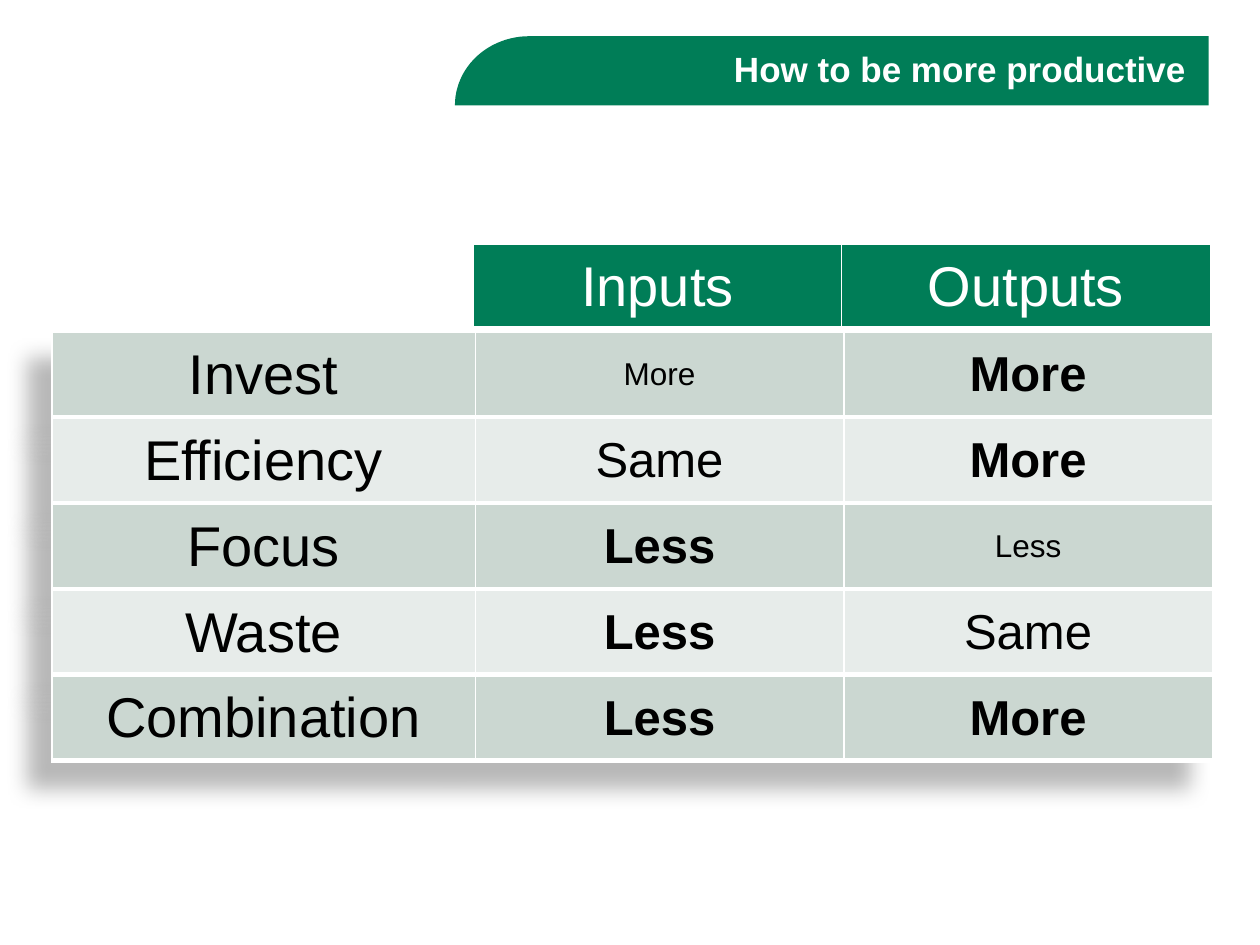
from math import cos, pi, sin

from lxml import etree
from pptx import Presentation
from pptx.dml.color import RGBColor
from pptx.enum.text import MSO_ANCHOR as Anchor, PP_ALIGN as Align
from pptx.oxml.ns import qn
from pptx.util import Pt

GREEN, SAGE, MIST, WHITE, BLACK = "007D57", "CBD7D1", "E7ECEA", "FFFFFF", "000000"
FONT = "Arial"
COLUMN_WIDTHS = (242, 210.6, 210.6)
ROW_HEIGHT, ROW_PITCH = 48.2, 49.1

HEADINGS = [("", 32, False), ("Inputs", 32, False), ("Outputs", 32, False)]
STRATEGIES = [
    [("Invest", 32, False), ("More", 18, False), ("More", 28, True)],
    [("Efficiency", 32, False), ("Same", 28, False), ("More", 28, True)],
    [("Focus", 32, False), ("Less", 28, True), ("Less", 18, False)],
    [("Waste", 32, False), ("Less", 28, True), ("Same", 28, False)],
    [("Combination", 32, False), ("Less", 28, True), ("More", 28, True)],
]


def color(value):
    return RGBColor.from_string(value)


def add_run(paragraph, text, size, bold, text_color):
    run = paragraph.add_run()
    run.text = text
    font = run.font
    font.name, font.size, font.bold = FONT, Pt(size), bold
    font.color.rgb = color(text_color)


def add_solid_color(parent, value):
    fill = etree.SubElement(parent, qn("a:solidFill"))
    return etree.SubElement(fill, qn("a:srgbClr"), val=value)


def set_borders(cell):
    properties = cell._tc.get_or_add_tcPr()
    for index, (side, width) in enumerate((("L", 1), ("R", 1), ("T", 1), ("B", 3))):
        line = etree.Element(qn(f"a:ln{side}"), w=str(Pt(width)))
        add_solid_color(line, WHITE)
        properties.insert(index, line)


def add_table_shadow(table):
    """Cast a soft shadow down and to the left."""
    effects = etree.Element(qn("a:effectLst"))
    shadow = etree.SubElement(
        effects, qn("a:outerShdw"), blurRad=str(Pt(12)), dist=str(Pt(20)),
        dir=str(135 * 60000), algn="tr", rotWithShape="0")
    shadow_color = add_solid_color(effects, BLACK)
    shadow.append(shadow_color)
    effects.remove(effects[-1])
    etree.SubElement(shadow_color, qn("a:alpha"), val="28000")
    table._tbl.tblPr.insert(0, effects)


def add_banner(slide, left, top, width, height):
    """Draw the title bar with its elliptical top left corner."""
    corner_width, steps = 42.5, 24
    angles = [pi / 2 * step / steps for step in range(steps + 1)]
    corner = [(left + corner_width * (1 - cos(angle)), top + height * (1 - sin(angle)))
              for angle in angles]
    right, bottom = left + width, top + height
    builder = slide.shapes.build_freeform(Pt(left), Pt(bottom))
    points = corner[1:] + [(right, top), (right, bottom)]
    builder.add_line_segments([(Pt(x), Pt(y)) for x, y in points], close=True)
    banner = builder.convert_to_shape()
    banner.shadow.inherit = False
    banner.fill.solid()
    banner.fill.fore_color.rgb = color(GREEN)
    banner.line.fill.background()

    title = slide.shapes.add_textbox(
        Pt(left + 43), Pt(top + 1.4), Pt(width - 56), Pt(33.8))
    frame = title.text_frame
    frame.word_wrap = True
    frame.margin_left = frame.margin_right = 0
    frame.vertical_anchor = Anchor.MIDDLE
    paragraph = frame.paragraphs[0]
    paragraph.alignment = Align.RIGHT
    add_run(paragraph, "How to be more productive", 20, True, WHITE)


def add_row_table(slide, left, top, entries, fills, text_color):
    """Add a table of one row and return it."""
    table = slide.shapes.add_table(
        1, len(entries), Pt(left), Pt(top),
        Pt(sum(COLUMN_WIDTHS)), Pt(ROW_HEIGHT)).table
    table.first_row = table.horz_banding = False
    for column, width in zip(table.columns, COLUMN_WIDTHS):
        column.width = Pt(width)
    for cell, (text, size, bold), fill in zip(table.rows[0].cells, entries, fills):
        cell.fill.solid()
        cell.fill.fore_color.rgb = color(fill)
        cell.vertical_anchor = Anchor.MIDDLE
        set_borders(cell)
        paragraph = cell.text_frame.paragraphs[0]
        paragraph.alignment = Align.CENTER
        if text:
            add_run(paragraph, text, size, bold, text_color)
    return table


def add_strategy_grid(slide, left, top):
    for index, entries in enumerate(STRATEGIES):
        fill = MIST if index % 2 else SAGE
        table = add_row_table(
            slide, left, top + index * ROW_PITCH, entries, [fill] * 3, BLACK)
        add_table_shadow(table)
    add_row_table(slide, left - 1.2, top - 50.4, HEADINGS, [WHITE, GREEN, GREEN], WHITE)


def main():
    presentation = Presentation()
    presentation.slide_width, presentation.slide_height = Pt(720), Pt(540)
    slide = presentation.slides.add_slide(presentation.slide_layouts[6])
    add_banner(slide, 260, 20.7, 430.7, 39.5)
    add_strategy_grid(slide, 29.6, 190.1)
    presentation.save("out.pptx")


if __name__ == "__main__":
    main()
